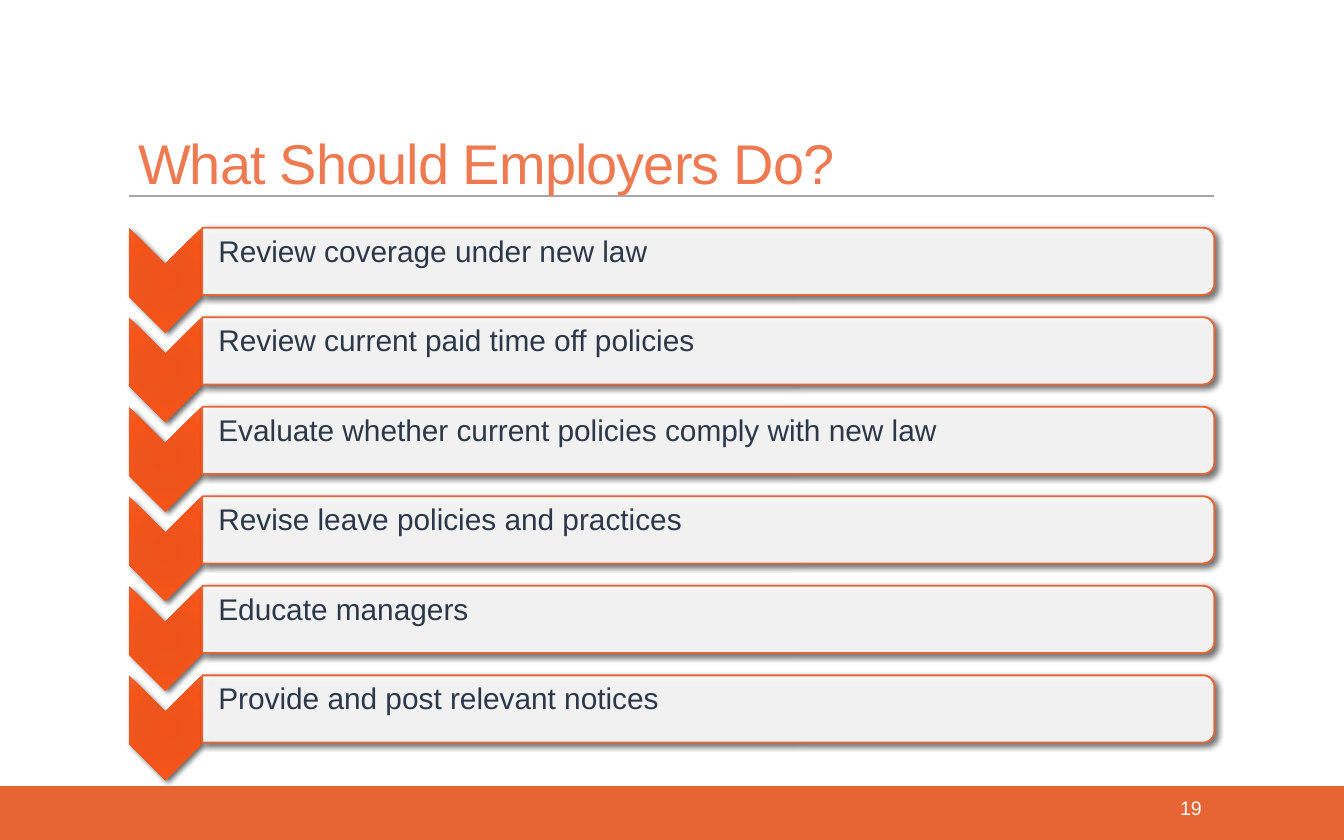
from lxml import etree
from pptx import Presentation
from pptx.dml.color import RGBColor
from pptx.enum.shapes import MSO_CONNECTOR, MSO_SHAPE as Shape
from pptx.enum.text import MSO_ANCHOR as Anchor, PP_ALIGN as Align
from pptx.oxml import parse_xml
from pptx.oxml.ns import nsdecls, qn
from pptx.util import Inches, Pt

COLORS = {
    "band": "E76434", "title": "EE7A52", "rule": "A6A6A6", "ink": "2C3849",
    "white": "FFFFFF", "shadow": "000000",
}
CHEVRON_STOPS = [(0, "F05217"), (34, "EE541C"), (70, "F65418"), (100, "F0602B")]
STEPS = [
    "Review coverage under new law",
    "Review current paid time off policies",
    "Evaluate whether current policies comply with new law",
    "Revise leave policies and practices",
    "Educate managers",
    "Provide and post relevant notices",
]
# The slide is a grid of square cells: 100 columns by 62.5 rows
COLUMNS, ROWS, CELL = 100, 62.5, 0.1
LEFT, FIRST_ROW, PITCH = 9.6, 16.95, 6.66
CHEVRON_WIDTH, CHEVRON_HEIGHT = 5.4, 7.8
PANEL_LEFT, PANEL_WIDTH, PANEL_HEIGHT = 15.05, 75.3, 5


def cells(*counts):
    return [Inches(count * CELL) for count in counts]


def rgb(name):
    return RGBColor.from_string(COLORS[name])


class SlideBuilder:
    font = "Arial"

    def __init__(self, presentation):
        self.slide = presentation.slides.add_slide(presentation.slide_layouts[6])
        self.shapes = self.slide.shapes

    def block(self, kind, left, top, width, height, fill=None, line=None):
        shape = self.shapes.add_shape(kind, *cells(left, top, width, height))
        shape.shadow.inherit = False
        if fill:
            shape.fill.solid()
            shape.fill.fore_color.rgb = rgb(fill)
        if line:
            shape.line.color.rgb = rgb(line)
            shape.line.width = Pt(1)
        else:
            shape.line.fill.background()
        return shape

    def turned(self, kind, left, top, width, height, **style):
        """Place a quarter-turned shape by the area it covers once turned."""
        shift = (width - height) / 2
        shape = self.block(kind, left + shift, top - shift, height, width, **style)
        shape.rotation = 90
        self.cast_shadow(shape)
        return shape

    def cast_shadow(self, shape):
        effects = shape._element.spPr.find(qn("a:effectLst"))
        effects.append(parse_xml(
            f'<a:outerShdw {nsdecls("a")} blurRad="{Pt(3)}" dist="{Pt(2)}" '
            f'dir="2700000" rotWithShape="0"><a:srgbClr val="{COLORS["shadow"]}">'
            '<a:alpha val="60000"/></a:srgbClr></a:outerShdw>'))

    def chevron(self, top):
        shape = self.turned(Shape.CHEVRON, LEFT, top, CHEVRON_WIDTH, CHEVRON_HEIGHT,
                            fill="band")
        properties = shape._element.spPr
        stops = "".join(f'<a:gs pos="{share * 1000}"><a:srgbClr val="{color}"/></a:gs>'
                        for share, color in CHEVRON_STOPS)
        properties.replace(properties.find(qn("a:solidFill")), parse_xml(
            f'<a:gradFill {nsdecls("a")} rotWithShape="1"><a:gsLst>{stops}</a:gsLst>'
            '<a:path path="circle"><a:fillToRect l="0" t="0" r="0" b="0"/></a:path>'
            '</a:gradFill>'))

    def panel(self, top):
        shape = self.turned(Shape.ROUND_2_SAME_RECTANGLE, PANEL_LEFT, top, PANEL_WIDTH,
                            PANEL_HEIGHT, fill="white", line="band")
        color = shape._element.spPr.find(qn("a:solidFill"))[0]
        etree.SubElement(color, qn("a:alpha")).set("val", "90000")

    def rule(self, left, right, row):
        line = self.shapes.add_connector(MSO_CONNECTOR.STRAIGHT,
                                         *cells(left, row, right, row))
        line.line.color.rgb = rgb("rule")
        line.line.width = Pt(1)
        etree.SubElement(line._element.spPr, qn("a:effectLst"))

    def text(self, content, left, top, width, height, size, color, inset=(1, 0.5),
             align=Align.LEFT, line_spacing=None, tracking=None):
        frame = self.shapes.add_textbox(*cells(left, top, width, height)).text_frame
        frame.word_wrap = True
        frame.vertical_anchor = Anchor.TOP
        frame.margin_left, frame.margin_top = cells(*inset)
        frame.margin_right, frame.margin_bottom = cells(*inset)
        frame.text = content
        paragraph = frame.paragraphs[0]
        paragraph.alignment = align
        paragraph.line_spacing = line_spacing
        run = paragraph.runs[0]
        run.font.name, run.font.size = self.font, Pt(size)
        run.font.color.rgb = rgb(color)
        if tracking:
            run._r.get_or_add_rPr().set("spc", str(int(tracking * 100)))


def main():
    presentation = Presentation()
    presentation.slide_width, presentation.slide_height = cells(COLUMNS, ROWS)
    builder = SlideBuilder(presentation)

    # Footer band, title rule, title and page number
    builder.block(Shape.RECTANGLE, 0, 58.5, COLUMNS, ROWS - 58.5, fill="band")
    builder.rule(LEFT, 90.3, 14.6)
    builder.text("What Should Employers Do?", 9.3, 9.7, 63.7, 3.9, 30, "title",
                 inset=(1, 0.6), line_spacing=0.85, tracking=-0.5)
    builder.text("19", 79.6, 58.7, 10.8, 3.3, 10.5, "white", align=Align.RIGHT)

    # Chevron list of steps
    for index, step in enumerate(STEPS):
        top = FIRST_ROW + index * PITCH
        builder.chevron(top)
        builder.panel(top)
        builder.text(step, PANEL_LEFT, top + 0.25, PANEL_WIDTH, 4.6, 16, "ink",
                     inset=(1.2, 0.1))

    presentation.save("out.pptx")


if __name__ == "__main__":
    main()
